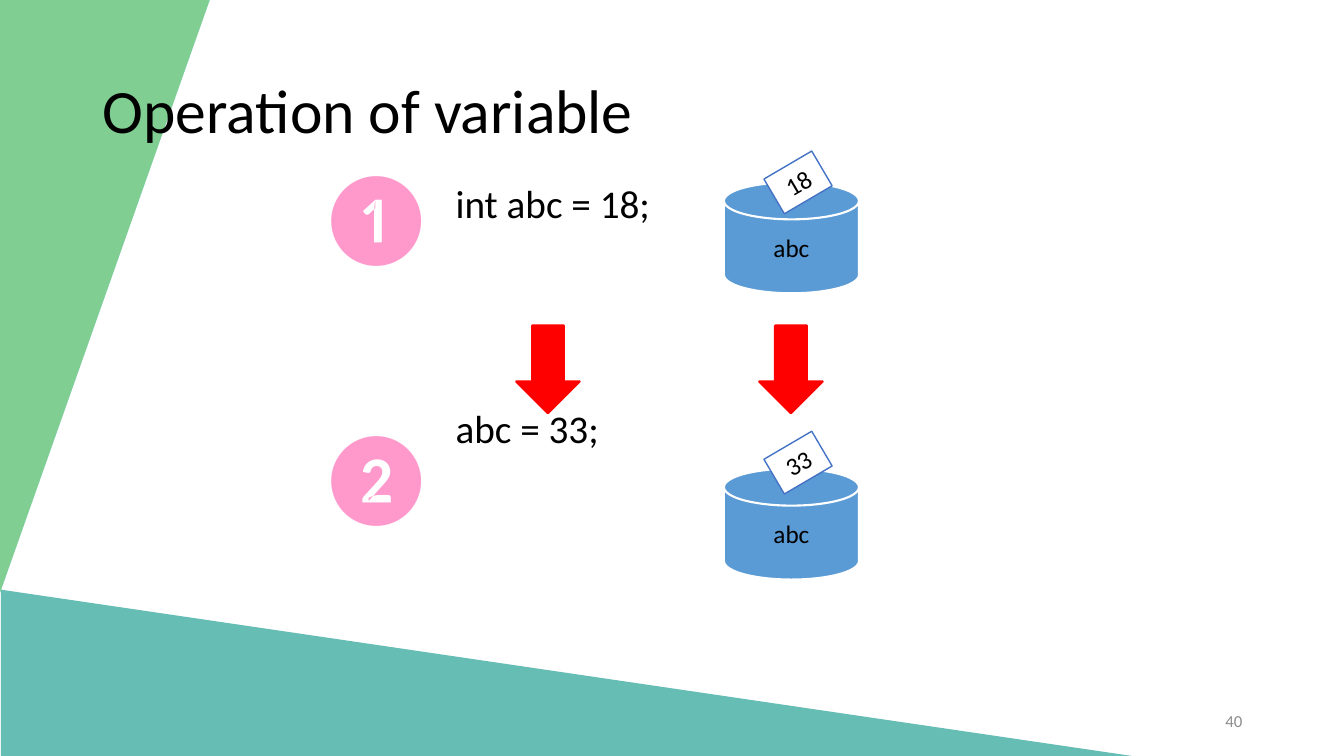
from lxml import etree
from pptx import Presentation
from pptx.dml.color import RGBColor
from pptx.enum.shapes import MSO_SHAPE
from pptx.enum.text import MSO_ANCHOR, MSO_AUTO_SIZE, PP_ALIGN
from pptx.oxml.ns import qn
from pptx.util import Inches, Pt

TRIANGLE = MSO_SHAPE.RIGHT_TRIANGLE
DISK = MSO_SHAPE.FLOWCHART_MAGNETIC_DISK
CARD = MSO_SHAPE.RECTANGLE
DOWN_ARROW = MSO_SHAPE.DOWN_ARROW
TOP, MIDDLE = MSO_ANCHOR.TOP, MSO_ANCHOR.MIDDLE
LEFT, CENTER, RIGHT = PP_ALIGN.LEFT, PP_ALIGN.CENTER, PP_ALIGN.RIGHT
NO_AUTOFIT = MSO_AUTO_SIZE.NONE

BLACK = RGBColor(0x00, 0x00, 0x00)
WHITE = RGBColor(0xFF, 0xFF, 0xFF)
SKY = RGBColor(0x00, 0xAD, 0xEF)
LIME = RGBColor(0x92, 0xD0, 0x50)
TEAL = RGBColor(0x00, 0x91, 0x83)
DISK_BLUE = RGBColor(0x5B, 0x9B, 0xD5)
CARD_EDGE = RGBColor(0x44, 0x72, 0xC4)
RED = RGBColor(0xFF, 0x00, 0x00)
PINK = RGBColor(0xFF, 0x99, 0xCC)
GRAY = RGBColor(0x8C, 0x8C, 0x8C)
FONT = "Calibri"


def inches(box):
    return [Inches(length) for length in box]


def write(shape, lines, size, color=BLACK, align=LEFT, anchor=TOP, wrap=True):
    frame = shape.text_frame
    frame.word_wrap = wrap
    frame.auto_size = NO_AUTOFIT
    frame.vertical_anchor = anchor
    frame.text = "\n".join(lines)
    for para in frame.paragraphs:
        para.alignment = align
        para.font.name = FONT
        para.font.size = Pt(size)
        para.font.color.rgb = color
    return frame.paragraphs


def add_text(slide, box, lines, size, **style):
    return write(slide.shapes.add_textbox(*inches(box)), lines, size, **style)


def add_figure(slide, kind, box, fill, edge=None, edge_width=1.5, rotation=0):
    shape = slide.shapes.add_shape(kind, *inches(box))
    shape.shadow.inherit = False
    shape.rotation = rotation
    shape.fill.solid()
    shape.fill.fore_color.rgb = fill
    if edge is None:
        shape.line.fill.background()
    else:
        shape.line.color.rgb = edge
        shape.line.width = Pt(edge_width)
    return shape


def add_backdrop(slide):
    side = (-1.9, 1.9, 5.88, 2.08)
    floor = (0.01, 5.85, 11.22, 1.65)
    for box, color, rotation in ((side, SKY, 90), (side, LIME, 90), (floor, TEAL, 0)):
        triangle = add_figure(slide, TRIANGLE, box, color, rotation=rotation)
        tint = triangle.element.spPr.find(".//" + qn("a:srgbClr"))
        etree.SubElement(tint, qn("a:alpha"), val="60000")


def set_title(slide, box, text):
    title = slide.shapes.title
    title.element.getparent().append(title.element)
    title.left, title.top, title.width, title.height = inches(box)
    write(title, [text], 44, anchor=MIDDLE)[0].line_spacing = 0.9


def add_code(slide, box, lines, gap):
    paras = add_text(slide, box, lines, 28)
    for para in paras:
        para.line_spacing = 0.9
    for para in paras[1:]:
        para.space_before = Pt(gap)


def add_variable(slide, box, name, value, card_rise):
    left, top, width, height = box
    disk = add_figure(slide, DISK, box, DISK_BLUE, WHITE)
    write(disk, [name], 18, align=CENTER, anchor=MIDDLE)
    card_box = (left + 0.46, top - card_rise, 0.55, 0.4)
    card = add_figure(slide, CARD, card_box, WHITE, CARD_EDGE, 1, 329.6)
    write(card, [value], 18, align=CENTER, wrap=False)


def main():
    deck = Presentation()
    deck.slide_width, deck.slide_height = Inches(13.33), Inches(7.5)
    slide = deck.slides.add_slide(deck.slide_layouts[5])
    add_backdrop(slide)
    set_title(slide, (0.92, 0.4, 11.5, 1.45), "Operation of variable")
    add_code(slide, (4.42, 1.78, 2.6, 4.95), ["int abc = 18;", "abc = 33;"], 131)
    add_variable(slide, (7.18, 1.81, 1.34, 1.1), "abc", "18", 0.2)
    add_variable(slide, (7.18, 4.65, 1.34, 1.1), "abc", "33", 0.26)
    for left in (5.12, 7.53):
        add_figure(slide, DOWN_ARROW, (left, 3.23, 0.63, 0.87), RED, RED)
    for top, badge in ((1.52, "❶"), (4.1, "❷")):
        add_text(slide, (3.03, top, 1.02, 1.21), [badge], 66, color=PINK)
    add_text(slide, (9.42, 6.95, 3, 0.4), ["40"], 12, color=GRAY, align=RIGHT, anchor=MIDDLE)
    deck.save("out.pptx")


if __name__ == "__main__":
    main()
